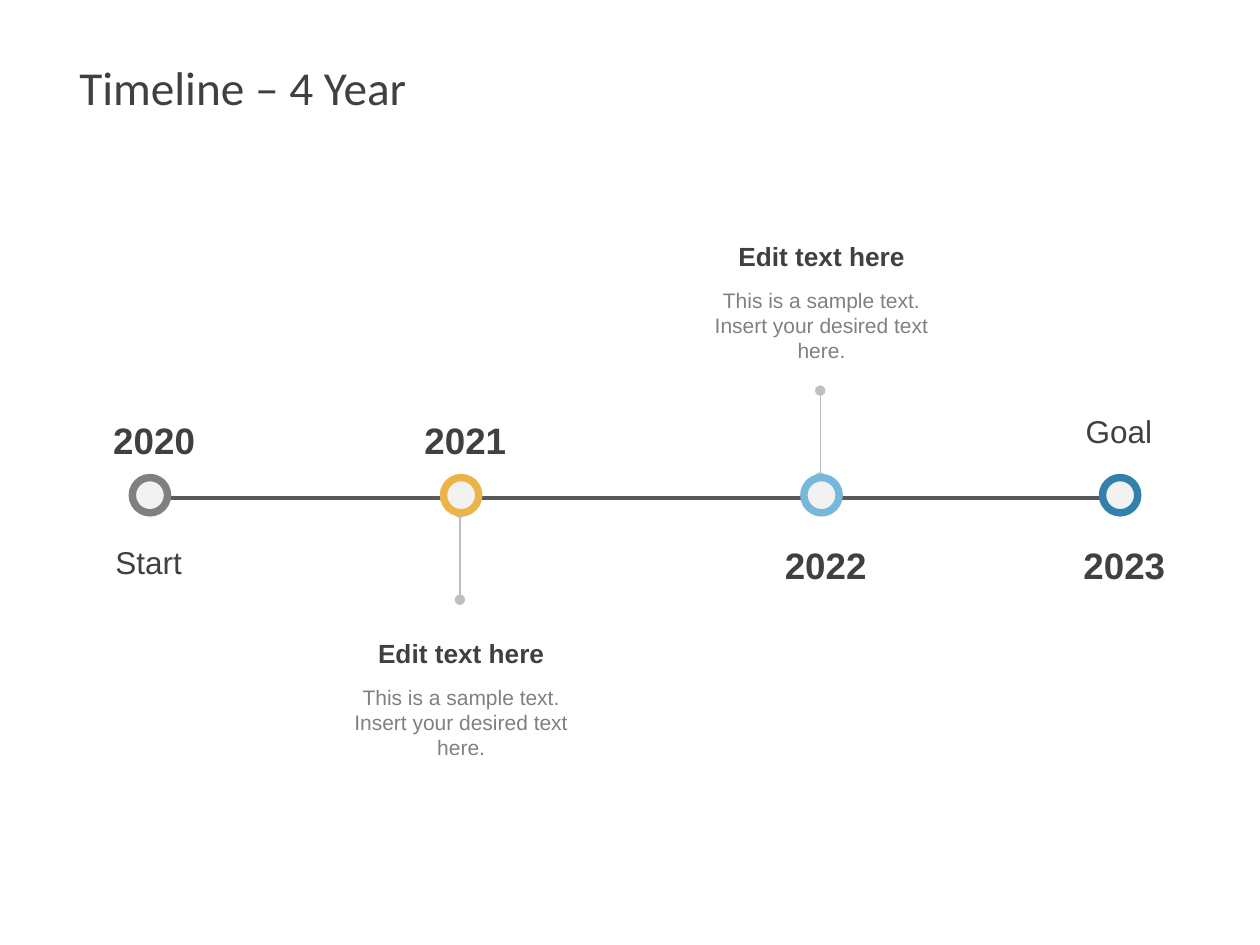
from lxml import etree
from pptx import Presentation
from pptx import util as u
from pptx.dml.color import RGBColor
from pptx.enum import shapes, text
from pptx.oxml.ns import qn

COLORS = {
    "dark": "404040", "gray": "808080", "pale": "F2F2F2", "axis": "595959",
    "stem": "BFBFBF", "yellow": "ECB448", "sky": "77B7D9", "blue": "3081AC",
}


class Timeline:
    """Draws timeline elements on one slide in a shared style."""

    def __init__(self, slide, font="Arial"):
        self.s = slide
        self.font = font

    def rgb(self, name):
        return RGBColor.from_string(COLORS[name])

    def line(self, start, end, color, width, dots=False):
        points = [u.Inches(v) for v in (*start, *end)]
        sp = self.s.shapes.add_connector(shapes.MSO_CONNECTOR.STRAIGHT, *points)
        sp.line.color.rgb = self.rgb(color)
        sp.line.width = u.Pt(width)
        if dots:
            ln = sp.line._get_or_add_ln()
            for end_tag in ("a:headEnd", "a:tailEnd"):
                etree.SubElement(ln, qn(end_tag), type="oval")
        etree.SubElement(sp._element.spPr, qn("a:effectLst"))

    def marker(self, x, y, color, size=0.28):
        box = [u.Inches(v) for v in (x - size / 2, y - size / 2, size, size)]
        sp = self.s.shapes.add_shape(shapes.MSO_SHAPE.OVAL, *box)
        sp.shadow.inherit = False
        sp.fill.solid()
        sp.fill.fore_color.rgb = self.rgb("pale")
        sp.line.color.rgb = self.rgb(color)
        sp.line.width = u.Pt(4.25)

    def label(self, box, words, size, color="dark", bold=False, wrap=True,
              align=text.PP_ALIGN.CENTER, font=None):
        sp = self.s.shapes.add_textbox(*[u.Inches(v) for v in box])
        tf = sp.text_frame
        tf.word_wrap = wrap
        tf.text = words
        p = tf.paragraphs[0]
        p.alignment = align
        r = p.runs[0]
        r.font.name = font or self.font
        r.font.size = u.Pt(size)
        r.font.bold = bold
        r.font.color.rgb = self.rgb(color)
        return tf

    def title(self, words):
        tf = self.label((0.5, 0.3, 9, 0.78), words, 27,
                        align=text.PP_ALIGN.LEFT, font="Calibri")
        tf.vertical_anchor = text.MSO_ANCHOR.MIDDLE
        tf.margin_left = tf.margin_right = u.Inches(0.13)
        tf.margin_top = tf.margin_bottom = u.Inches(0.07)

    def year(self, x, top, words):
        self.label((x - 0.39, top, 0.85, 0.45), words, 21, bold=True,
                   wrap=False, align=text.PP_ALIGN.LEFT)

    def caption(self, x, top, words):
        self.label((x - 0.56, top, 1.1, 0.4), words, 18)

    def note(self, x, top, heading, body):
        left = x - 1.04
        self.label((left, top + 0.37, 2.08, 0.71), body, 12, "gray")
        self.label((left, top, 2.08, 0.35), heading, 15, bold=True)


def main():
    prs = Presentation()
    prs.slide_width, prs.slide_height = u.Inches(10), u.Inches(7.5)
    t = Timeline(prs.slides.add_slide(prs.slide_layouts[6]))

    axis_y, above, below = 3.93, 3.27, 4.26
    milestones = [
        ("2020", 1.19, "gray", above),
        ("2021", 3.66, "yellow", above),
        ("2022", 6.52, "sky", below),
        ("2023", 8.89, "blue", below),
    ]
    notes = [(3.66, 4.07, 5.01), (6.52, 3.1, 1.86)]

    for x, stem_top, _ in notes:
        t.line((x - 0.01, stem_top), (x - 0.01, stem_top + 0.69), "stem", 0.75, dots=True)
    t.title("Timeline – 4 Year")
    t.line((1.21, 3.95), (8.85, 3.95), "axis", 2.25)
    for name, x, color, year_top in milestones:
        t.marker(x, axis_y, color)
        t.year(x, year_top, name)
    t.caption(1.19, below, "Start")
    t.caption(8.89, 3.22, "Goal")
    for x, _, note_top in notes:
        t.note(x, note_top, "Edit text here",
               "This is a sample text. Insert your desired text here.")

    prs.save("out.pptx")


if __name__ == "__main__":
    main()
